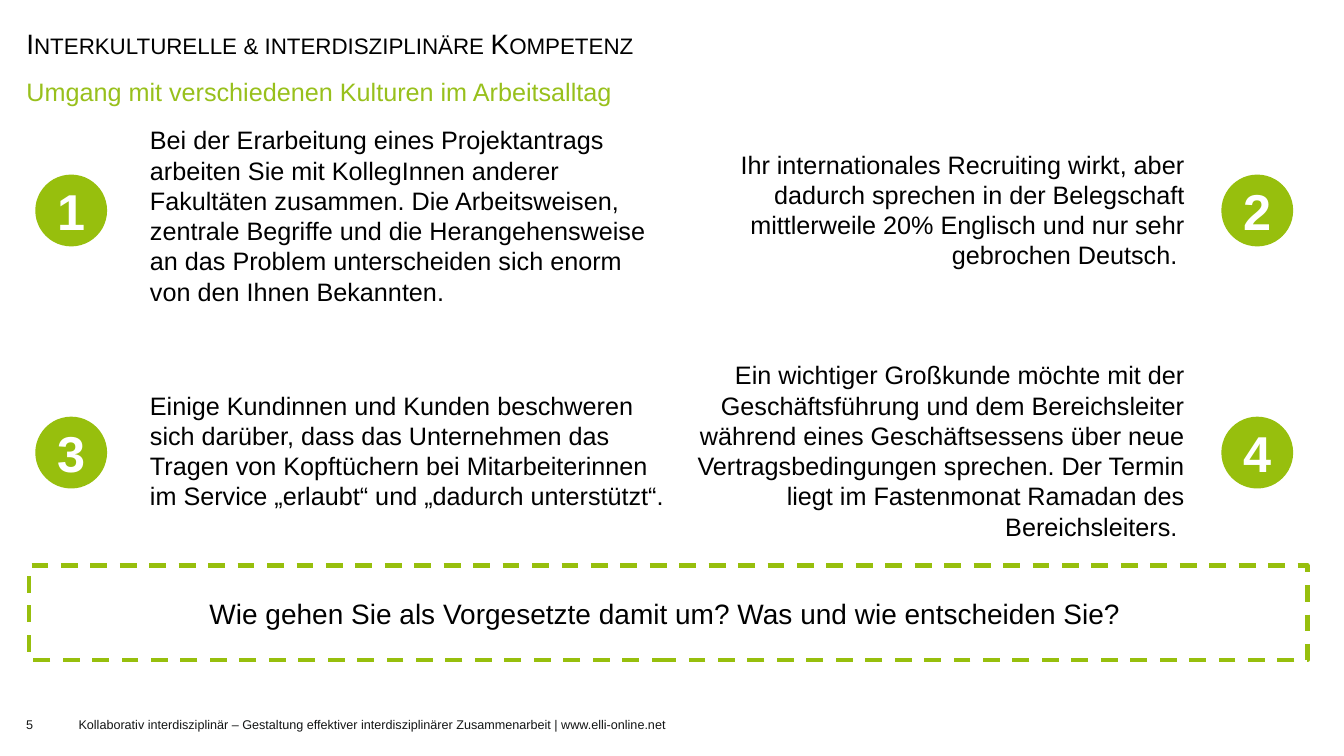
"""Build the slide on intercultural and interdisciplinary competence."""
from pptx import Presentation
from pptx import util as u
from pptx.dml import color
from pptx.enum import dml, shapes, text
from pptx.oxml import ns, xmlchemy

GREEN, BLACK, WHITE = "97BF0D", "000000", "FFFFFF"
MIDDLE, TOP = text.MSO_ANCHOR.MIDDLE, text.MSO_ANCHOR.TOP
LEFT, CENTER, RIGHT = text.PP_ALIGN.LEFT, text.PP_ALIGN.CENTER, text.PP_ALIGN.RIGHT
NO_INSETS = {f"margin_{side}": 0 for side in ("left", "top", "right", "bottom")}
GROWING = {"auto_size": text.MSO_AUTO_SIZE.SHAPE_TO_FIT_TEXT}


def rgb(value):
    return color.RGBColor.from_string(value)


def write(shape, words, size, hue, align=LEFT, bold=False, **frame_format):
    frame = shape.text_frame
    for name, value in {"word_wrap": True, **frame_format}.items():
        setattr(frame, name, value)
    paragraph = frame.paragraphs[0]
    paragraph.alignment = align
    run = paragraph.add_run()
    run.text = words
    for name, value in {"name": "Arial", "size": u.Pt(size), "bold": bold}.items():
        setattr(run.font, name, value)
    run.font.color.rgb = rgb(hue)
    return paragraph


deck = Presentation()
deck.slide_width, deck.slide_height = u.Cm(33.87), u.Cm(19.05)
slide = deck.slides.add_slide(deck.slide_layouts[1])
canvas = slide.shapes

topic, subtopic = slide.placeholders
headings = [
    (topic, 0.56, 23.8, "Interkulturelle & interdisziplinäre Kompetenz", 20, BLACK, MIDDLE),
    (subtopic, 1.73, 33.07, "Umgang mit verschiedenen Kulturen im Arbeitsalltag", 18, "98C01C", TOP),
]
for heading, top, width, words, size, hue, anchor in headings:
    place = {"left": 0.41, "top": top, "width": width, "height": 0.99}
    for name, value in place.items():
        setattr(heading, name, u.Cm(value))
    line = write(heading, words, size, hue, vertical_anchor=anchor,
                 auto_size=text.MSO_AUTO_SIZE.NONE)
    line.line_spacing, line.space_before = 1.1, u.Pt(0)

topic.text_frame.paragraphs[0].runs[0].font._element.set("cap", "small")
subtopic_format = subtopic.text_frame.paragraphs[0]._p.get_or_add_pPr()
subtopic_format.set("marL", "0")
subtopic_format.set("indent", "0")
subtopic_format.append(xmlchemy.OxmlElement("a:buNone"))

cases = [
    (3.02, 13.06, 4.88, "Bei der Erarbeitung eines Projektantrags arbeiten Sie mit KollegInnen "
     "anderer Fakultäten zusammen. Die Arbeitsweisen, zentrale Begriffe und die "
     "Herangehensweise an das Problem unterscheiden sich enorm von den Ihnen Bekannten."),
    (3.63, 13.13, 3.33, "Ihr internationales Recruiting wirkt, aber dadurch sprechen in der "
     "Belegschaft mittlerweile 20% Englisch und nur sehr gebrochen Deutsch. "),
    (9.7, 13.46, 3.33, "Einige Kundinnen und Kunden beschweren sich darüber, dass das "
     "Unternehmen das Tragen von Kopftüchern bei Mitarbeiterinnen im Service „erlaubt“ "
     "und „dadurch unterstützt“."),
    (8.94, 13.13, 4.88, "Ein wichtiger Großkunde möchte mit der Geschäftsführung und dem "
     "Bereichsleiter während eines Geschäftsessens über neue Vertragsbedingungen sprechen. "
     "Der Termin liegt im Fastenmonat Ramadan des Bereichsleiters. "),
]
columns = [(0.89, 3.53, LEFT), (30.78, 16.97, RIGHT)]
for index, (top, width, height, words) in enumerate(cases):
    row, column = divmod(index, 2)
    number_left, case_left, align = columns[column]
    case = canvas.add_textbox(u.Cm(case_left), u.Cm(top), u.Cm(width), u.Cm(height))
    write(case, words, 18, BLACK, align, **GROWING)
    number = canvas.add_shape(shapes.MSO_SHAPE.OVAL, u.Cm(number_left),
                              u.Cm(4.4 + 6.1 * row), u.Cm(1.81), u.Cm(1.81))
    number.shadow.inherit = False
    number.fill.solid()
    number.fill.fore_color.rgb = rgb(GREEN)
    number.line.fill.background()
    write(number, str(index + 1), 36, WHITE, CENTER, True, vertical_anchor=MIDDLE, **NO_INSETS)

frame = canvas.add_shape(shapes.MSO_SHAPE.RECTANGLE, u.Cm(0.74), u.Cm(14.25), u.Cm(32.21), u.Cm(2.39))
frame.shadow.inherit = False
frame.fill.background()
frame.line.color.rgb = rgb(GREEN)
frame.line.width = u.Pt(3)
frame.line.dash_style = dml.MSO_LINE.DASH

question = canvas.add_textbox(u.Cm(5.03), u.Cm(14.91), u.Cm(23.83), u.Cm(1.12))
write(question, "Wie gehen Sie als Vorgesetzte damit um? Was und wie entscheiden Sie?",
      20, BLACK, word_wrap=False, **GROWING)

footers = [
    (0.66, 1.27, "5"),
    (1.98, 16, "Kollaborativ interdisziplinär – Gestaltung effektiver interdisziplinärer "
     "Zusammenarbeit | www.elli-online.net"),
]
for left, width, words in footers:
    footer = canvas.add_textbox(u.Cm(left), u.Cm(17.77), u.Cm(width), u.Cm(0.95))
    write(footer, words, 9, "141616", vertical_anchor=MIDDLE, **NO_INSETS)

deck.save("out.pptx")
